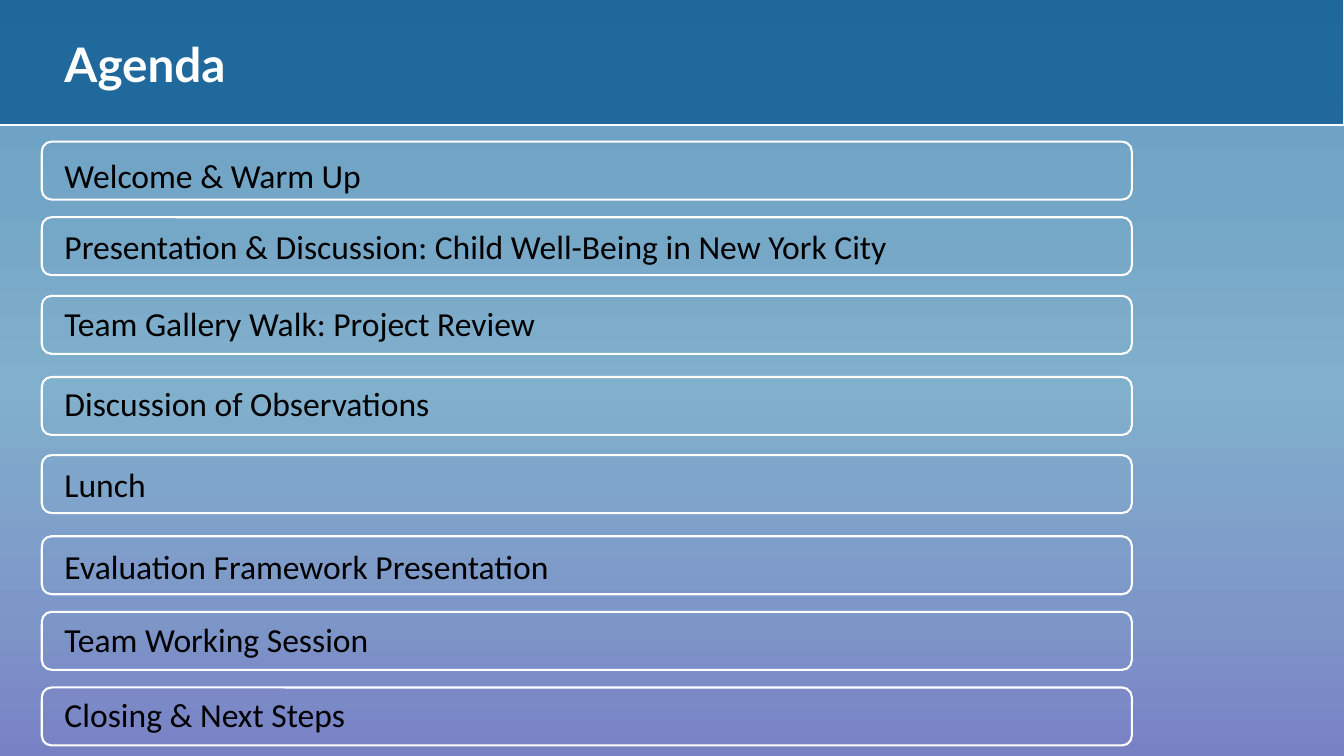
from dataclasses import dataclass

import pptx
import pptx.dml.color
import pptx.enum.shapes
import pptx.enum.text
import pptx.oxml
import pptx.oxml.ns
import pptx.util

SHAPE = pptx.enum.shapes.MSO_SHAPE
COLUMNS, ROWS = 26.67, 15
CELL = pptx.util.Inches(1)


@dataclass(frozen=True)
class Theme:
    gradient: tuple = (
        (0, "77B7E3"),
        (26, "88C3EA"),
        (51, "98CFF0"),
        (80, "94B3EC"),
        (100, "8F98E8"),
    )
    shade: str = "000000"
    banner: str = "0E5C93"
    light: str = "FFFFFF"
    ink: str = "000000"
    title_font: str = "Lato"
    body_font: str = "Calibri"
    title_size: float = 68
    body_size: float = 48
    banner_line: float = 2.5
    frame_line: float = 3


@dataclass(frozen=True)
class Area:
    column: float
    row: float
    columns: float
    rows: float

    def lengths(self) -> list[int]:
        return [round(cells * CELL) for cells in (self.column, self.row, self.columns, self.rows)]


@dataclass(frozen=True)
class AgendaItem:
    text: str
    frame_row: float
    text_row: float


THEME = Theme()
AGENDA = (
    AgendaItem("Welcome & Warm Up", 2.81, 3.02),
    AgendaItem("Presentation & Discussion: Child Well-Being in New York City", 4.31, 4.43),
    AgendaItem("Team Gallery Walk: Project Review", 5.87, 5.95),
    AgendaItem("Discussion of Observations", 7.48, 7.54),
    AgendaItem("Lunch", 9.03, 9.14),
    AgendaItem("Evaluation Framework Presentation", 10.64, 10.77),
    AgendaItem("Team Working Session", 12.14, 12.22),
    AgendaItem("Closing & Next Steps", 13.64, 13.7),
)


def rgb(color: str) -> pptx.dml.color.RGBColor:
    return pptx.dml.color.RGBColor.from_string(color)


def paint_background(slide) -> None:
    fill = slide.background.fill
    fill.gradient()
    fill.gradient_angle = 270
    stops = slide.element.find(".//" + pptx.oxml.ns.qn("a:gsLst"))
    for stop in list(stops):
        stops.remove(stop)
    for position, color in THEME.gradient:
        stops.append(pptx.oxml.parse_xml(
            f'<a:gs {pptx.oxml.ns.nsdecls("a")} pos="{position * 1000}">'
            f'<a:srgbClr val="{color}"/></a:gs>'
        ))


def add_panel(slide, kind: SHAPE, area: Area, fill: str | None = None,
              opacity: int = 100, line_width: float = 0) -> None:
    shape = slide.shapes.add_shape(kind, *area.lengths())
    shape.shadow.inherit = False
    if fill is None:
        shape.fill.background()
    else:
        shape.fill.solid()
        shape.fill.fore_color.rgb = rgb(fill)
        color = shape.fill._xPr.find(".//" + pptx.oxml.ns.qn("a:srgbClr"))
        color.append(pptx.oxml.parse_xml(
            f'<a:alpha {pptx.oxml.ns.nsdecls("a")} val="{opacity * 1000}"/>'
        ))
    if line_width:
        shape.line.color.rgb = rgb(THEME.light)
        shape.line.width = pptx.util.Pt(line_width)
    else:
        shape.line.fill.background()


def add_label(slide, text: str, area: Area, font_name: str, size: float,
              color: str, bold: bool = False) -> None:
    text_frame = slide.shapes.add_textbox(*area.lengths()).text_frame
    text_frame.word_wrap = True
    text_frame.auto_size = pptx.enum.text.MSO_AUTO_SIZE.SHAPE_TO_FIT_TEXT
    text_frame.vertical_anchor = pptx.enum.text.MSO_ANCHOR.MIDDLE
    inset = round(0.06 * CELL)
    text_frame.margin_left = text_frame.margin_right = inset
    text_frame.margin_top = text_frame.margin_bottom = inset
    text_frame.text = text
    font = text_frame.paragraphs[0].runs[0].font
    font.name = font_name
    font.size = pptx.util.Pt(size)
    font.bold = bold
    font.color.rgb = rgb(color)


def main() -> None:
    presentation = pptx.Presentation()
    presentation.slide_width = round(COLUMNS * CELL)
    presentation.slide_height = ROWS * CELL
    slide = presentation.slides.add_slide(presentation.slide_layouts[6])

    paint_background(slide)
    add_panel(slide, SHAPE.RECTANGLE, Area(0, 0, COLUMNS, ROWS), THEME.shade, opacity=15)
    add_panel(slide, SHAPE.RECTANGLE, Area(-0.3, -0.19, COLUMNS + 0.3, 2.67),
              THEME.banner, opacity=80, line_width=THEME.banner_line)
    add_label(slide, "Agenda", Area(1.22, 0.63, 20.12, 1.26),
              THEME.title_font, THEME.title_size, THEME.light, bold=True)

    for item in AGENDA:
        add_panel(slide, SHAPE.ROUNDED_RECTANGLE, Area(0.83, item.frame_row, 21.63, 1.15),
                  line_width=THEME.frame_line)
        add_label(slide, item.text, Area(1.22, item.text_row, 18.05, 0.92),
                  THEME.body_font, THEME.body_size, THEME.ink)

    presentation.save("out.pptx")


if __name__ == "__main__":
    main()
